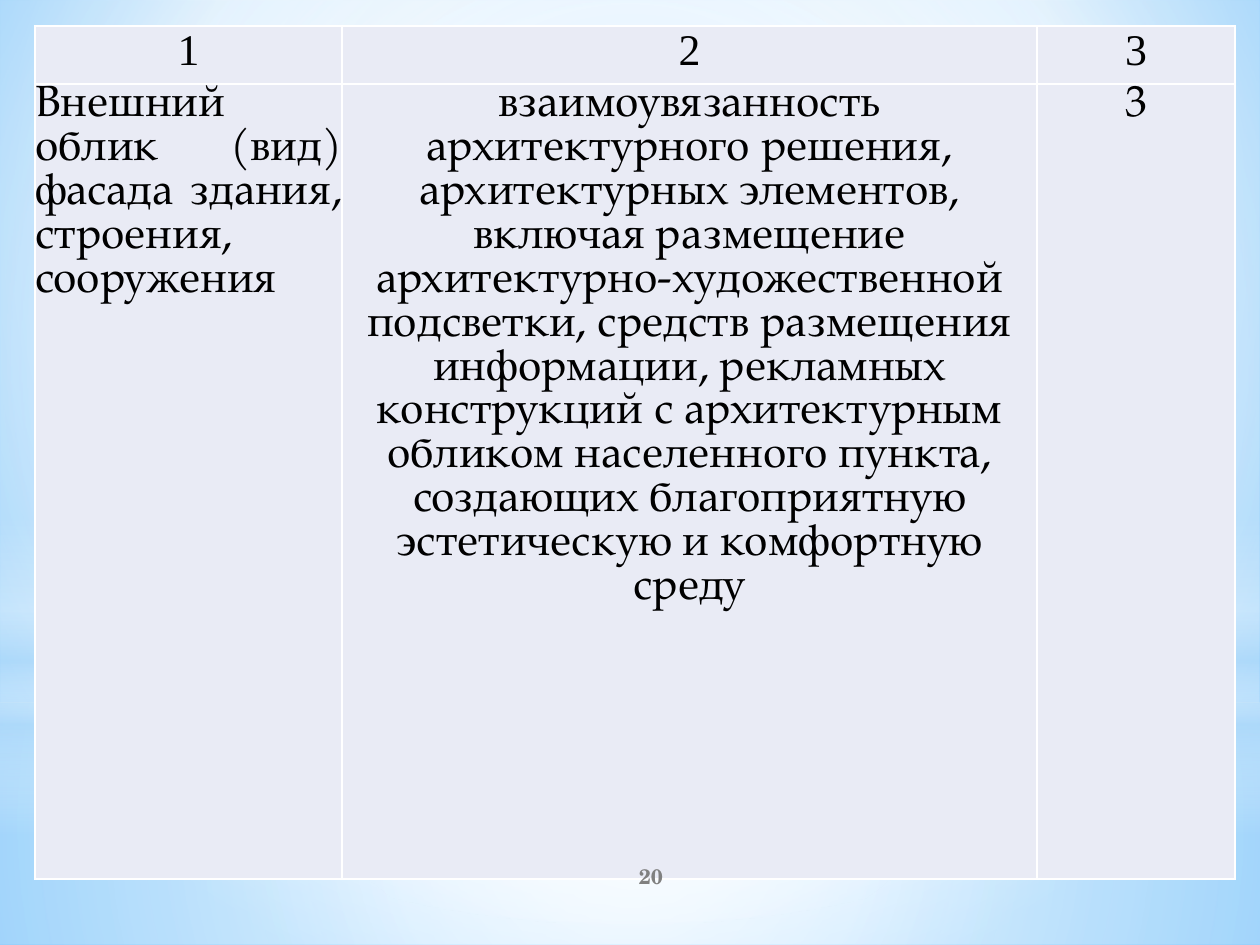
from dataclasses import dataclass

from lxml import etree
from pptx import Presentation, util as u
from pptx.dml.color import RGBColor
from pptx.enum import shapes, text
from pptx.oxml import ns, parse_xml

PX = 914400 / 126
COLORS = {
    "white": "FFFFFF", "black": "000000", "grey": "808080", "cell": "E9EBF5",
    "haze": "B4DCFA", "sky": "9ED5FF", "deep_sky": "5BB9FF",
}
SERIF, BODY, NUMBER = "Times New Roman", "TeX Gyre Pagella", "TeX Gyre Schola"
CENTER, JUSTIFY = text.PP_ALIGN.CENTER, text.PP_ALIGN.JUSTIFY
CENTRED = (50, 50, 50, 50)


@dataclass
class Gradient:
    stops: list  # (position %, colour, opacity %)
    focus: tuple = ()  # insets in % of a circular gradient; empty means top to bottom


@dataclass
class Glow:
    preset: shapes.MSO_SHAPE
    box: tuple
    gradient: Gradient


@dataclass
class Entry:
    words: str
    font: str
    align: text.PP_ALIGN = CENTER


def px(length: int) -> u.Emu:
    return u.Emu(round(length * PX))


def gradient_xml(gradient: Gradient):
    stops = "".join(
        f'<a:gs pos="{pos * 1000}"><a:srgbClr val="{COLORS[name]}">'
        f'<a:alpha val="{opacity * 1000}"/></a:srgbClr></a:gs>'
        for pos, name, opacity in gradient.stops)
    if gradient.focus:
        sides = " ".join(f'{side}="{inset * 1000}"' for side, inset in zip("ltrb", gradient.focus))
        direction = f'<a:path path="circle"><a:fillToRect {sides}/></a:path>'
    else:
        direction = '<a:lin ang="5400000" scaled="0"/>'
    return parse_xml(f'<a:gradFill {ns.nsdecls("a")} rotWithShape="1">'
                     f'<a:gsLst>{stops}</a:gsLst>{direction}</a:gradFill>')


def set_gradient(fill, owner, gradient: Gradient) -> None:
    """Swap a plain fill inside its owner element for the gradient."""
    fill.solid()
    plain = owner.find(ns.qn("a:solidFill"))
    owner.replace(plain, gradient_xml(gradient))


def draw_glow(slide, glow: Glow) -> None:
    shape = slide.shapes.add_shape(glow.preset, *map(px, glow.box))
    shape.shadow.inherit = False
    shape.line.fill.background()
    set_gradient(shape.fill, shape.element.spPr, glow.gradient)


def write(frame, entry: Entry, size: int, color: str, bold: bool = False) -> None:
    frame.text = entry.words
    frame.word_wrap = True
    paragraph = frame.paragraphs[0]
    paragraph.alignment = entry.align
    font = paragraph.runs[0].font
    font.name, font.size, font.bold = entry.font, u.Pt(size), bold
    font.color.rgb = RGBColor.from_string(COLORS[color])


def add_borders(cell, color: str) -> None:
    properties = cell._tc.get_or_add_tcPr()
    for index, side in enumerate(("lnL", "lnR", "lnT", "lnB")):
        line = etree.Element(ns.qn(f"a:{side}"), w=str(u.Pt(1)))
        fill = etree.SubElement(line, ns.qn("a:solidFill"))
        etree.SubElement(fill, ns.qn("a:srgbClr"), val=COLORS[color])
        properties.insert(index, line)


def draw_table(slide, left: int, top: int, widths: list, heights: list, rows: list) -> None:
    table = slide.shapes.add_table(len(rows), len(widths), px(left), px(top),
                                   px(sum(widths)), px(sum(heights))).table
    table.first_row = table.horz_banding = False
    for column, width in zip(table.columns, widths):
        column.width = px(width)
    for row, height, entries in zip(table.rows, heights, rows):
        row.height = px(height)
        for cell, entry in zip(row.cells, entries):
            cell.margin_left = cell.margin_right = 0
            cell.margin_top = cell.margin_bottom = px(1)
            cell.fill.solid()
            cell.fill.fore_color.rgb = RGBColor.from_string(COLORS["cell"])
            add_borders(cell, "white")
            write(cell.text_frame, entry, 25, "black")


BACKGROUND = Gradient([(0, "sky", 100), (60, "white", 100), (100, "deep_sky", 100)],
                      (20, 10, 20, 60))
RECT, OVAL = shapes.MSO_SHAPE.RECTANGLE, shapes.MSO_SHAPE.OVAL
GLOWS = [
    Glow(RECT, (0, 703, 1260, 242),
         Gradient([(0, "white", 91), (37, "white", 76), (100, "haze", 79)], CENTRED)),
    Glow(RECT, (0, 0, 1260, 703),
         Gradient([(0, "white", 89), (48, "white", 62), (100, "haze", 79)], CENTRED)),
    Glow(RECT, (0, 519, 1260, 315),
         Gradient([(0, "white", 0), (29, "white", 30), (45, "haze", 40),
                   (55, "white", 26), (65, "haze", 60), (100, "white", 0)])),
    Glow(OVAL, (0, 221, 1260, 703),
         Gradient([(0, "white", 100), (56, "white", 0)], CENTRED)),
]
CRITERIA = [
    [Entry(number, SERIF) for number in "123"],
    [
        Entry("Внешний облик (вид) фасада здания, строения, сооружения", BODY, JUSTIFY),
        Entry("взаимоувязанность архитектурного решения, архитектурных элементов, "
              "включая размещение архитектурно-художественной подсветки, средств "
              "размещения информации, рекламных конструкций с архитектурным обликом "
              "населенного пункта, создающих благоприятную эстетическую и комфортную "
              "среду", BODY),
        Entry("3", BODY),
    ],
]


def main() -> None:
    deck = Presentation()
    deck.slide_width, deck.slide_height = px(1260), px(945)
    slide = deck.slides.add_slide(deck.slide_layouts[6])

    # Sky background with soft glows
    sky = slide.background.fill
    sky.solid()
    set_gradient(sky, slide.element.find(".//" + ns.qn("p:bgPr")), BACKGROUND)
    for glow in GLOWS:
        draw_glow(slide, glow)

    # Criteria table
    draw_table(slide, 35, 26, [307, 695, 198], [58, 795], CRITERIA)

    # Slide number
    page_number = slide.shapes.add_textbox(*map(px, (525, 851, 252, 50))).text_frame
    page_number.vertical_anchor = text.MSO_ANCHOR.MIDDLE
    write(page_number, Entry("20", NUMBER), 12, "grey", bold=True)

    deck.save("out.pptx")


if __name__ == "__main__":
    main()
